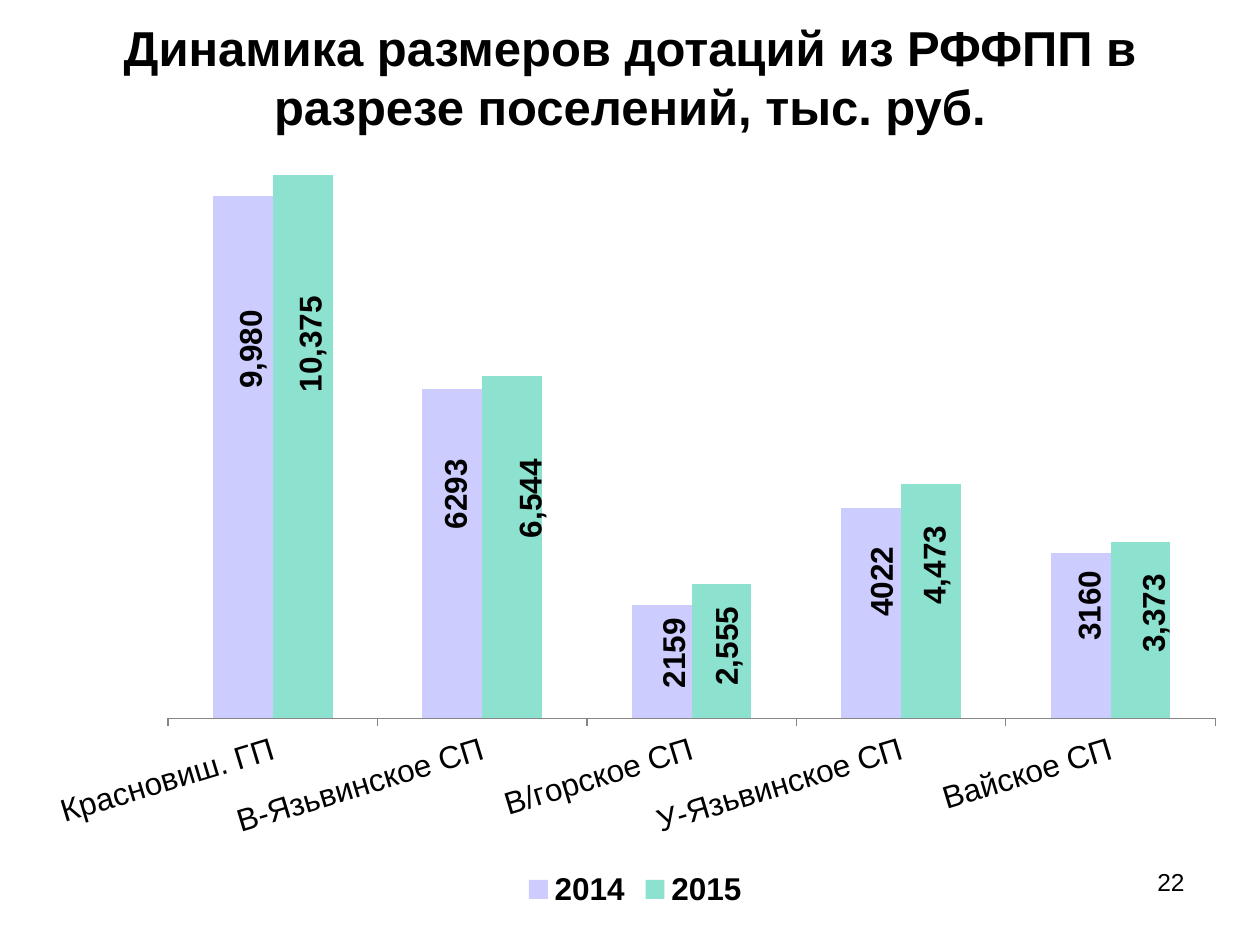
from typing import NamedTuple

from lxml.etree import SubElement
from pptx import Presentation
from pptx.chart.data import CategoryChartData
from pptx.dml.color import RGBColor
from pptx.enum.chart import XL_CHART_TYPE, XL_LABEL_POSITION, XL_LEGEND_POSITION, XL_TICK_MARK
from pptx.enum.text import MSO_ANCHOR, MSO_AUTO_SIZE, PP_ALIGN
from pptx.oxml import parse_xml
from pptx.oxml.ns import qn
from pptx.util import Pt

FONT = "Arial"
BLACK = "000000"
THOUSANDS = "#,##0"
PLAIN = "0"
CHART_BOX = (18, 42, 690, 480)
PLOT_BOX = (78, 9.5, 598.5, 359)  # relative to the chart
NO_LEADER_LINES = (
    '<c:extLst xmlns:c="http://schemas.openxmlformats.org/drawingml/2006/chart">'
    '<c:ext uri="{CE6537A1-D6FC-4f65-9D91-7224C49458BB}" '
    'xmlns:c15="http://schemas.microsoft.com/office/drawing/2012/chart">'
    '<c15:showLeaderLines val="0"/></c:ext></c:extLst>')


class Bar(NamedTuple):
    value: int
    label_shift: tuple[float, float]  # from the bar's centre, in points
    number_format: str = THOUSANDS


class Year(NamedTuple):
    name: str
    color: str
    bars: list[Bar]


SETTLEMENTS = ["Красновиш. ГП", "В-Язьвинское СП", "В/горское СП",
               "У-Язьвинское СП", "Вайское СП"]
YEARS = [
    Year("2014", "CCCCFF", [
        Bar(9980, (4.5, -61.5)), Bar(6293, (2, -34), PLAIN), Bar(2159, (7, -5), PLAIN),
        Bar(4022, (6, -18), PLAIN), Bar(3160, (5, -17), PLAIN)]),
    Year("2015", "8CE1CF", [
        Bar(10375, (4.5, -58.5)), Bar(6544, (10.5, -27.5)), Bar(2555, (3, -3)),
        Bar(4473, (2, -20.5)), Bar(3373, (7.5, -9.5))]),
]


def rgb(color: str) -> RGBColor:
    return RGBColor.from_string(color)


def format_font(font, size: float, bold: bool = False, color: str = BLACK) -> None:
    font.name, font.size, font.bold = FONT, Pt(size), bold
    font.color.rgb = rgb(color)


def write_text(shape, text: str, *, size: float, bold: bool = False,
               align=PP_ALIGN.LEFT, anchor=MSO_ANCHOR.TOP) -> None:
    frame = shape.text_frame
    frame.word_wrap = True
    frame.auto_size = MSO_AUTO_SIZE.NONE
    frame.vertical_anchor = anchor
    paragraph = frame.paragraphs[0]
    paragraph.alignment = align
    run = paragraph.add_run()
    run.text = text
    format_font(run.font, size, bold)


def layout_element(x: float, y: float, size: tuple[float, float] | None = None):
    """Manual chart layout: an offset, or a whole inner plot box when size is given."""
    layout = parse_xml('<c:layout xmlns:c="http://schemas.openxmlformats.org/'
                       'drawingml/2006/chart"><c:manualLayout/></c:layout>')
    values = {"x": x / CHART_BOX[2], "y": y / CHART_BOX[3]}
    if size:
        values = {"layoutTarget": "inner", "xMode": "edge", "yMode": "edge", **values,
                  "w": size[0] / CHART_BOX[2], "h": size[1] / CHART_BOX[3]}
    for tag, value in values.items():
        SubElement(layout[0], qn(f"c:{tag}")).set("val", str(value))
    return layout


def rotate_text(parent, degrees: int) -> None:
    body = parent.find(qn("c:txPr")).find(qn("a:bodyPr"))
    body.set("rot", str(degrees * 60000))
    body.set("vert", "horz")


def format_label(series, index: int, bar: Bar) -> None:
    label = series.points[index].data_label
    format_font(label.font, 18, bold=True)
    label.position = XL_LABEL_POSITION.CENTER
    element = series.data_labels._element.findall(qn("c:dLbl"))[index]
    rotate_text(element, -90)
    layout = layout_element(*bar.label_shift)
    element.find(qn("c:idx")).addnext(layout)
    number_format = SubElement(element, qn("c:numFmt"))
    number_format.set("formatCode", bar.number_format)
    number_format.set("sourceLinked", "0")
    layout.addnext(number_format)


def hide_leader_lines(series) -> None:
    labels = series.data_labels._element
    for leader_lines in labels.findall(qn("c:showLeaderLines")):
        leader_lines.set("val", "0")
    labels.append(parse_xml(NO_LEADER_LINES))


def add_grants_chart(slide) -> None:
    data = CategoryChartData()
    data.categories = SETTLEMENTS
    for year in YEARS:
        data.add_series(year.name, [bar.value for bar in year.bars])
    chart = slide.shapes.add_chart(XL_CHART_TYPE.COLUMN_CLUSTERED,
                                   *map(Pt, CHART_BOX), data).chart
    format_font(chart.font, 18)
    chart.has_title = False

    # Legend
    chart.has_legend = True
    chart.legend.position = XL_LEGEND_POSITION.BOTTOM
    chart.legend.include_in_layout = False
    format_font(chart.legend.font, 18, bold=True)

    # Axes
    chart.value_axis.minimum_scale = 0
    chart.value_axis.maximum_scale = 12000
    chart.value_axis.has_major_gridlines = False
    chart.value_axis.visible = False
    axis = chart.category_axis
    axis.major_tick_mark = XL_TICK_MARK.OUTSIDE
    axis.format.line.color.rgb = rgb("868686")
    axis.format.line.width = Pt(0.75)
    format_font(axis.tick_labels.font, 18)
    rotate_text(axis._element, -17)

    # Plot area
    plot = chart.plots[0]
    plot.gap_width, plot.overlap, plot.vary_by_categories = 150, 0, False
    plot_area = chart._chartSpace.chart.plotArea
    for old_layout in plot_area.findall(qn("c:layout")):
        plot_area.remove(old_layout)
    plot_area.insert(0, layout_element(*PLOT_BOX[:2], PLOT_BOX[2:]))

    # Bars and their labels
    for series, year in zip(plot.series, YEARS):
        series.format.fill.solid()
        series.format.fill.fore_color.rgb = rgb(year.color)
        series.data_labels.show_value = True
        for index, bar in enumerate(year.bars):
            format_label(series, index, bar)
        hide_leader_lines(series)


def main() -> None:
    presentation = Presentation()
    presentation.slide_width, presentation.slide_height = Pt(720), Pt(540)
    slide = presentation.slides.add_slide(presentation.slide_layouts[5])

    # Title
    title = slide.shapes.title
    title.left, title.top, title.width, title.height = map(Pt, (36, 21.6, 648, 44.6))
    write_text(title, "Динамика размеров дотаций из РФФПП в разрезе поселений, тыс. руб.",
               size=28, bold=True, align=PP_ALIGN.CENTER, anchor=MSO_ANCHOR.MIDDLE)

    add_grants_chart(slide)

    # Page number
    page_number = slide.shapes.add_textbox(*map(Pt, (516, 492, 168, 37.5)))
    write_text(page_number, "22", size=14, align=PP_ALIGN.RIGHT)

    presentation.save("out.pptx")


if __name__ == "__main__":
    main()
